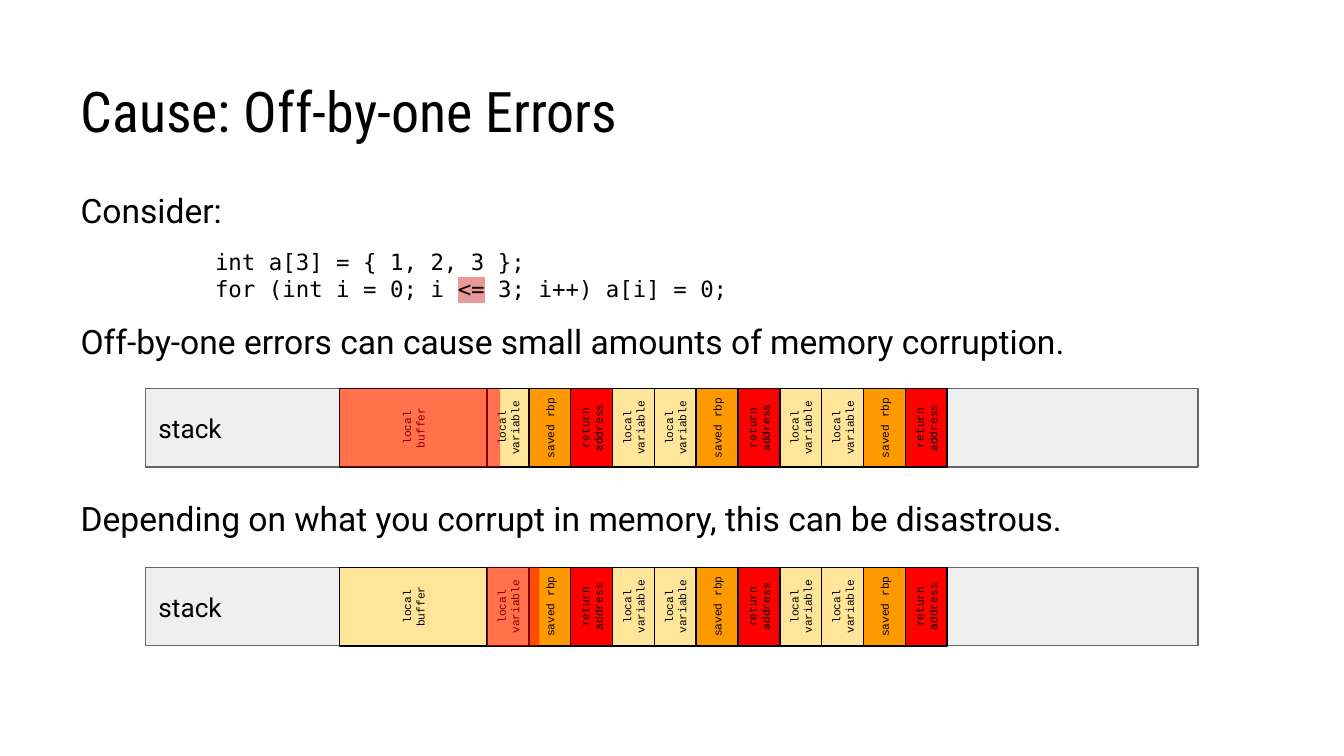
from dataclasses import dataclass

from lxml import etree
from pptx import Presentation
from pptx.dml.color import RGBColor
from pptx.enum.shapes import MSO_SHAPE
from pptx.enum.text import MSO_ANCHOR, MSO_AUTO_SIZE, PP_ALIGN
from pptx.oxml.ns import qn
from pptx.util import Pt

RECTANGLE = MSO_SHAPE.RECTANGLE
MIDDLE, TOP, BOTTOM = MSO_ANCHOR.MIDDLE, MSO_ANCHOR.TOP, MSO_ANCHOR.BOTTOM
LEFT, CENTER = PP_ALIGN.LEFT, PP_ALIGN.CENTER


@dataclass(frozen=True)
class Theme:
    ink: str = "000000"
    stack: str = "EFEFEF"
    stack_line: str = "666666"
    local: str = "FFE599"
    saved: str = "FF9900"
    danger: str = "FF0000"
    highlight: str = "EA9999"
    title: tuple = ("Roboto Condensed", 30)
    body: tuple = ("Roboto", 18)
    code: tuple = ("DejaVu Sans Mono", 12)
    stack_label: tuple = ("Roboto", 14)
    cell: tuple = ("Courier New", 6)


THEME = Theme()

# Content
TITLE = "Cause: Off-by-one Errors"
CODE_INDENT = 72
# text parts, type style, indent, space before; part 1 of a line is highlighted
BODY = [
    (["Consider:"], THEME.body, 0, 0),
    (["int a[3] = { 1, 2, 3 };"], THEME.code, CODE_INDENT, 10),
    (["for (int i = 0; i ", "<=", " 3; i++) a[i] = 0;"], THEME.code, CODE_INDENT, 0),
    (["Off-by-one errors can cause small amounts of memory corruption."],
     THEME.body, 0, 10),
    (["Depending on what you corrupt in memory, this can be disastrous."],
     THEME.body, 0, 73),  # leaves room for the first stack
]
VARIABLE = ("local variable", THEME.local)
RBP = ("saved rbp", THEME.saved)
RETURN = ("return address", THEME.danger)
FRAME = [VARIABLE, RBP, RETURN]
CELLS = [("local buffer", THEME.local)] + FRAME + 2 * ([VARIABLE] + FRAME)

# Layout, in points
STACK_LEFT, STACK_WIDTH, STACK_HEIGHT = 77.8, 564, 42
BUFFER_LEFT, BUFFER_WIDTH, CELL_WIDTH = 182, 79, 22.4
FIRST_CELL = BUFFER_LEFT + BUFFER_WIDTH
# stack top, overflow left, overflow width
STACKS = [(208.2, BUFFER_LEFT, 86), (304, FIRST_CELL, 28)]


def color(value):
    return RGBColor.from_string(value)


def set_font(paragraph, style):
    font = paragraph.font
    font.name, size = style
    font.size = Pt(size)
    font.color.rgb = color(THEME.ink)


def set_frame(frame, anchor, inset):
    frame.word_wrap = True
    frame.auto_size = MSO_AUTO_SIZE.NONE
    frame.vertical_anchor = anchor
    frame.margin_left = frame.margin_right = Pt(inset)
    frame.margin_top = frame.margin_bottom = Pt(inset)


def place(shape, left, top, width, height):
    shape.left, shape.top = Pt(left), Pt(top)
    shape.width, shape.height = Pt(width), Pt(height)


def add_box(slide, left, top, width, height, fill, line=None):
    box = slide.shapes.add_shape(RECTANGLE, Pt(left), Pt(top), Pt(width), Pt(height))
    box.shadow.inherit = False
    box.fill.solid()
    box.fill.fore_color.rgb = color(fill)
    if line:
        box.line.color.rgb = color(line)
        box.line.width = Pt(0.75)
    else:
        box.line.fill.background()
    return box


def add_upright(slide, left, top, width, fill, line=None):
    """Add a box turned to read upwards that covers the given strip of a stack."""
    shift = (STACK_HEIGHT - width) / 2
    box = add_box(slide, left - shift, top + shift, STACK_HEIGHT, width, fill, line)
    box.rotation = 270
    return box


def label(box, text, style, align, inset):
    set_frame(box.text_frame, MIDDLE, inset)
    paragraph = box.text_frame.paragraphs[0]
    paragraph.text = text
    paragraph.alignment = align
    set_font(paragraph, style)


def add_body(frame):
    set_frame(frame, TOP, 7.2)
    for index, (parts, style, indent, before) in enumerate(BODY):
        paragraph = frame.add_paragraph() if index else frame.paragraphs[0]
        properties = paragraph._p.get_or_add_pPr()
        properties.set("marL", str(Pt(indent)))
        properties.set("indent", "0")
        etree.SubElement(properties, qn("a:buNone"))
        paragraph.space_before = Pt(before)
        set_font(paragraph, style)
        for position, part in enumerate(parts):
            run = paragraph.add_run()
            run.text = part
            if position == 1:
                mark = etree.SubElement(run._r.get_or_add_rPr(), qn("a:highlight"))
                etree.SubElement(mark, qn("a:srgbClr"), val=THEME.highlight)


def add_stack(slide, top, overflow_left, overflow_width):
    stack = add_box(slide, STACK_LEFT, top, STACK_WIDTH, STACK_HEIGHT,
                    THEME.stack, THEME.stack_line)
    label(stack, "stack", THEME.stack_label, LEFT, 7.2)

    # Cells, from the right so that left ones lie on top
    for index, (text, fill) in reversed(list(enumerate(CELLS))):
        left = FIRST_CELL + (index - 1) * CELL_WIDTH if index else BUFFER_LEFT
        width = CELL_WIDTH if index else BUFFER_WIDTH
        cell = add_upright(slide, left, top, width, fill, THEME.ink)
        label(cell, text, THEME.cell, CENTER, 0)

    # Half-transparent overflow
    overflow = add_upright(slide, overflow_left, top, overflow_width, THEME.danger)
    fill_color = overflow._element.spPr.find(qn("a:solidFill"))[0]
    etree.SubElement(fill_color, qn("a:alpha"), val="50000")


def main():
    deck = Presentation()
    deck.slide_width, deck.slide_height = Pt(720), Pt(405)
    slide = deck.slides.add_slide(deck.slide_layouts[1])

    # Title and text
    title, body = slide.placeholders
    place(title, 36, 16.6, 648, 67.7)
    label(title, TITLE, THEME.title, LEFT, 7.2)
    title.text_frame.vertical_anchor = BOTTOM
    place(body, 36, 94.3, 648, 293)
    add_body(body.text_frame)

    # Stacks
    for stack in STACKS:
        add_stack(slide, *stack)
    deck.save("out.pptx")


if __name__ == "__main__":
    main()
